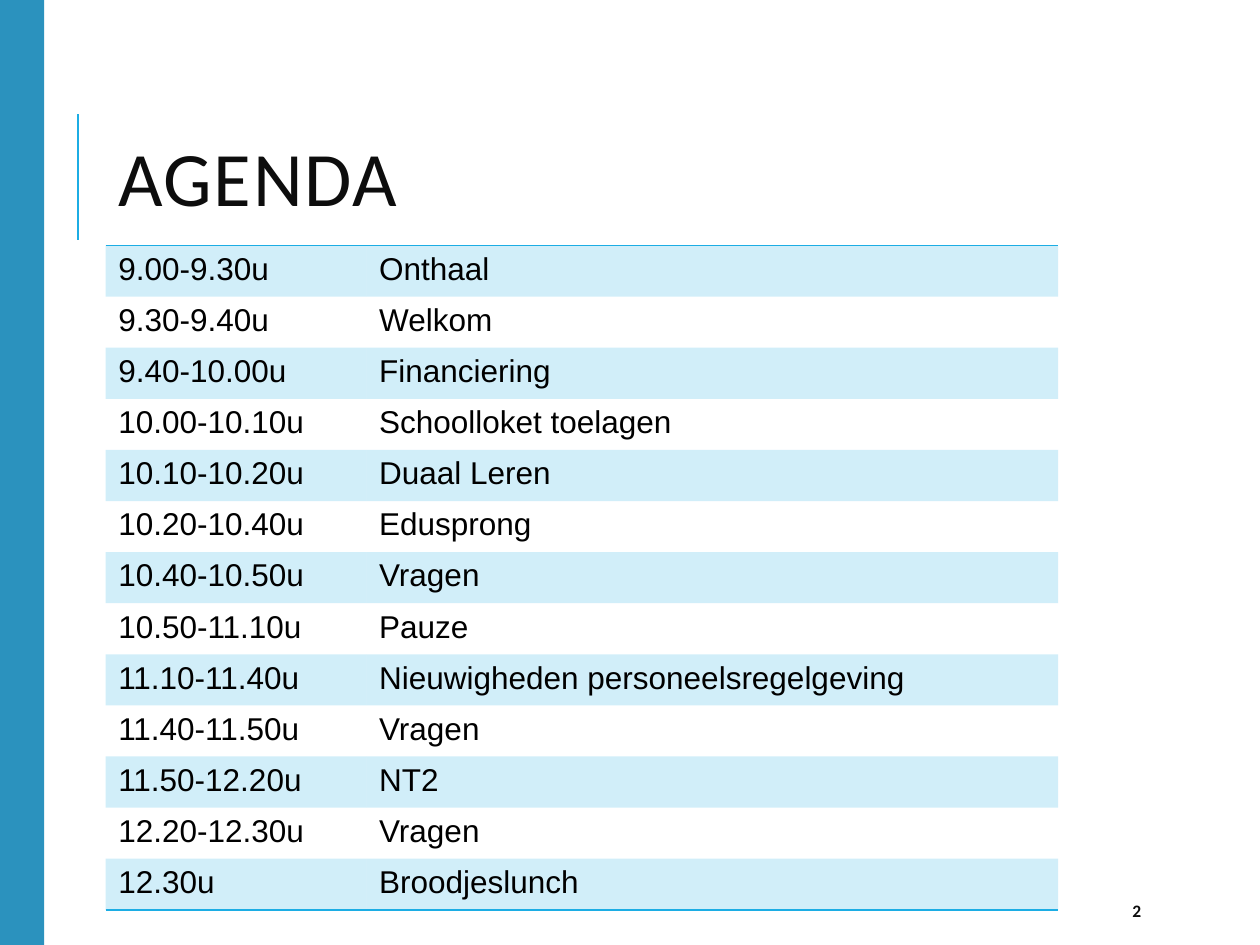
from lxml.etree import SubElement
from pptx import Presentation
from pptx.dml.color import RGBColor
from pptx.enum.shapes import MSO_CONNECTOR, MSO_SHAPE
from pptx.enum.text import MSO_ANCHOR
from pptx.oxml import parse_xml
from pptx.oxml.ns import nsdecls, qn
from pptx.util import Cm, Pt

COLORS = {"accent": "1CADE4", "side": "2B92BE", "heading": "0D0D0D", "body": "000000"}
NO_STYLE = "{2D5ABB26-0587-4C30-8999-92F81FD0307C}"
BAND_OPACITY = 20

HEADING = "AGENDA"
PAGE_NUMBER = "2"
AGENDA = [
    ("9.00-9.30u", "Onthaal"),
    ("9.30-9.40u", "Welkom"),
    ("9.40-10.00u", "Financiering"),
    ("10.00-10.10u", "Schoolloket toelagen"),
    ("10.10-10.20u", "Duaal Leren"),
    ("10.20-10.40u", "Edusprong"),
    ("10.40-10.50u", "Vragen"),
    ("10.50-11.10u", "Pauze"),
    ("11.10-11.40u", "Nieuwigheden personeelsregelgeving"),
    ("11.40-11.50u", "Vragen"),
    ("11.50-12.20u", "NT2"),
    ("12.20-12.30u", "Vragen"),
    ("12.30u", "Broodjeslunch"),
]

LEFT = 2.13
TABLE_TOP = 4.95
COLUMN_WIDTHS = (5.26, 13.94)
ROW_HEIGHT = 1.03


def color(name):
    return RGBColor.from_string(COLORS[name])


def style_run(run, size, font, color_name, bold=False):
    run.font.size = Pt(size)
    run.font.name = font
    run.font.bold = bold
    run.font.color.rgb = color(color_name)


def add_label(slide, text, left, top, width, height, size, bold=False):
    label = slide.shapes.add_textbox(Cm(left), Cm(top), Cm(width), Cm(height))
    frame = label.text_frame
    frame.word_wrap = True
    frame.vertical_anchor = MSO_ANCHOR.MIDDLE
    frame.text = text
    style_run(frame.paragraphs[0].runs[0], size, "Calibri", "heading", bold)
    return frame.paragraphs[0]


def add_side_decoration(slide, slide_height):
    rule = slide.shapes.add_connector(
        MSO_CONNECTOR.STRAIGHT, Cm(1.57), Cm(4.83), Cm(1.57), Cm(2.29))
    rule.line.color.rgb = color("accent")
    rule.line.width = Pt(1.5)
    SubElement(rule.element.spPr, qn("a:effectLst"))

    side_bar = slide.shapes.add_shape(MSO_SHAPE.RECTANGLE, 0, 0, Cm(0.89), slide_height)
    side_bar.shadow.inherit = False
    side_bar.fill.solid()
    side_bar.fill.fore_color.rgb = color("side")
    side_bar.line.fill.background()


def fill_band(cell):
    cell.fill.solid()
    cell.fill.fore_color.rgb = color("accent")
    tint = cell._tc.tcPr.find(".//" + qn("a:srgbClr"))
    SubElement(tint, qn("a:alpha"), val=str(BAND_OPACITY * 1000))


def add_border(cell, side):
    """Draw a 1 pt accent border; side is "lnT" or "lnB"."""
    border = parse_xml(
        f'<a:{side} {nsdecls("a")} w="{Pt(1)}"><a:solidFill>'
        f'<a:srgbClr val="{COLORS["accent"]}"/></a:solidFill></a:{side}>')
    cell._tc.get_or_add_tcPr().insert(0, border)


def add_agenda(slide):
    frame = slide.shapes.add_table(
        len(AGENDA), len(COLUMN_WIDTHS), Cm(LEFT), Cm(TABLE_TOP),
        Cm(sum(COLUMN_WIDTHS)), Cm(ROW_HEIGHT * len(AGENDA)))
    table = frame.table
    table.first_row = False
    table.horz_banding = False
    next(frame.element.iter(qn("a:tableStyleId"))).text = NO_STYLE
    for column, width in zip(table.columns, COLUMN_WIDTHS):
        column.width = Cm(width)

    for row_index, entry in enumerate(AGENDA):
        table.rows[row_index].height = Cm(ROW_HEIGHT)
        for column_index, text in enumerate(entry):
            cell = table.cell(row_index, column_index)
            cell.text_frame.text = text
            style_run(cell.text_frame.paragraphs[0].runs[0], 18, "Arial", "body")
            if row_index % 2 == 0:
                fill_band(cell)
            else:
                cell.fill.background()
            if row_index == 0:
                add_border(cell, "lnT")
            if row_index == len(AGENDA) - 1:
                add_border(cell, "lnB")


def main():
    deck = Presentation()
    deck.slide_width, deck.slide_height = Cm(25.4), Cm(19.05)
    slide = deck.slides.add_slide(deck.slide_layouts[6])

    add_side_decoration(slide, deck.slide_height)
    heading = add_label(slide, HEADING, LEFT, 1.63, 20.24, 4.17, 44)
    heading.line_spacing = 0.8
    heading.runs[0].font._element.set("spc", "100")
    add_label(slide, PAGE_NUMBER, 22.58, 17.98, 2.03, 0.76, 10, bold=True)
    add_agenda(slide)
    deck.save("out.pptx")


if __name__ == "__main__":
    main()
